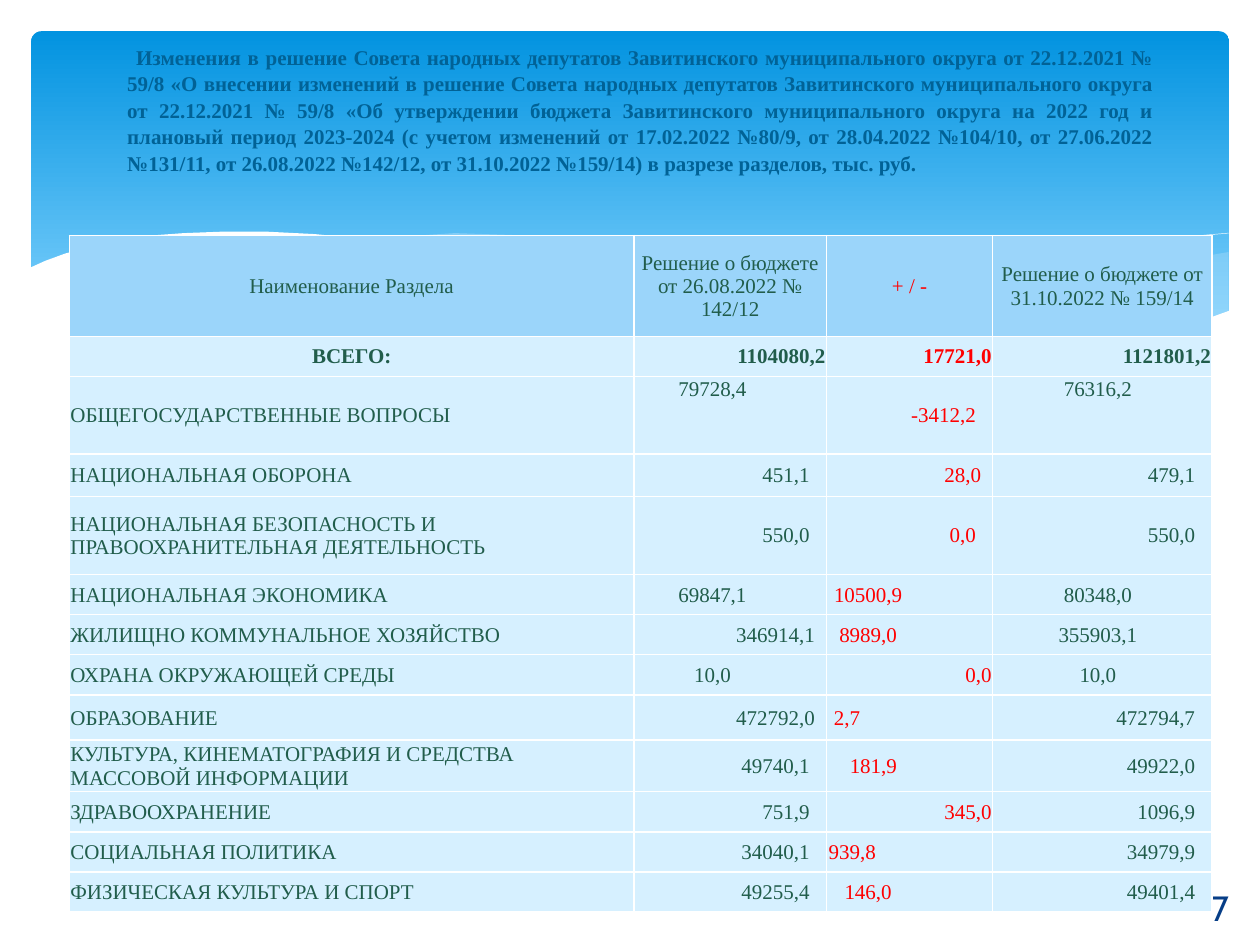
from lxml import etree
from pptx import Presentation
from pptx import util as u
from pptx.dml import color
from pptx.enum import shapes, text
from pptx.oxml import ns

SERIF = "Times New Roman"
WHITE, GREEN, RED = "FFFFFF", "215D4B", "FF0000"
SPACE = 0.106  # width of one 12 pt space, cm

HEADING = (
    "Изменения в решение Совета народных депутатов Завитинского муниципального округа "
    "от 22.12.2021 № 59/8 «О внесении изменений в решение Совета народных депутатов "
    "Завитинского муниципального округа от 22.12.2021 № 59/8 «Об утверждении бюджета "
    "Завитинского муниципального округа на 2022 год и плановый период 2023-2024 "
    "(с учетом изменений от 17.02.2022 №80/9, от 28.04.2022 №104/10, "
    "от 27.06.2022 №131/11, от 26.08.2022 №142/12, от 31.10.2022 №159/14) "
    "в разрезе разделов, тыс. руб."
)

COLUMN_WIDTHS = (11.38, 3.88, 3.35, 4.42)
HEADERS = ("Наименование Раздела", "Решение о бюджете от 26.08.2022 № 142/12",
           "+ / -", "Решение о бюджете от 31.10.2022 № 159/14")
# section, row height, the three sums, their right indents in spaces
SECTIONS = (
    ("ВСЕГО:", 0.81, ("1104080,2", "17721,0", "1121801,2"), (0, 0, 0)),
    ("ОБЩЕГОСУДАРСТВЕННЫЕ ВОПРОСЫ", 1.56, ("79728,4", "-3412,2", "76316,2"), (15, 3, 15)),
    ("НАЦИОНАЛЬНАЯ ОБОРОНА", 0.86, ("451,1", "28,0", "479,1"), (3, 2, 3)),
    ("НАЦИОНАЛЬНАЯ БЕЗОПАСНОСТЬ И ПРАВООХРАНИТЕЛЬНАЯ ДЕЯТЕЛЬНОСТЬ", 1.57,
     ("550,0", "0,0", "550,0"), (3, 3, 3)),
    ("НАЦИОНАЛЬНАЯ ЭКОНОМИКА", 0.81, ("69847,1", "10500,9", "80348,0"), (15, 17, 15)),
    ("ЖИЛИЩНО КОММУНАЛЬНОЕ ХОЗЯЙСТВО", 0.81, ("346914,1", "8989,0", "355903,1"), (2, 18, 14)),
    ("ОХРАНА ОКРУЖАЮЩЕЙ СРЕДЫ", 0.81, ("10,0", "0,0", "10,0"), (18, 0, 18)),
    ("ОБРАЗОВАНИЕ", 0.91, ("472792,0", "2,7", "472794,7"), (2, 25, 3)),
    ("КУЛЬТУРА, КИНЕМАТОГРАФИЯ И СРЕДСТВА МАССОВОЙ ИНФОРМАЦИИ", 1.04,
     ("49740,1", "181,9", "49922,0"), (3, 18, 3)),
    ("ЗДРАВООХРАНЕНИЕ", 0.81, ("751,9", "345,0", "1096,9"), (3, 0, 3)),
    ("СОЦИАЛЬНАЯ ПОЛИТИКА", 0.81, ("34040,1", "939,8", "34979,9"), (3, 22, 3)),
    ("ФИЗИЧЕСКАЯ КУЛЬТУРА И СПОРТ", 0.81, ("49255,4", "146,0", "49401,4"), (3, 19, 3)),
)

RIGHT_WAVE = (
    (24.77, 5.08), (23.75, 5.26), (22.63, 5.49), (21.13, 5.84), (19.13, 6.3), (16.79, 6.73),
    (17.91, 6.88), (19.23, 7.01), (20.68, 7.06), (21.92, 6.99), (22.99, 6.83), (23.93, 6.58),
    (24.77, 6.27))
MIDDLE_WAVE = (
    (22.68, 6.93), (21.26, 6.73), (19.69, 6.45), (17.93, 6.1), (15.98, 5.64), (14.45, 5.28),
    (13.06, 5.03), (11.81, 4.85), (10.67, 4.75), (9.17, 4.7), (7.95, 4.78), (7.26, 4.85),
    (8.69, 5.05), (10.26, 5.36), (12.47, 5.89), (14.38, 6.3), (16.51, 6.71), (18.34, 6.96),
    (19.94, 7.06), (21.29, 7.06))
FALLING_CURVE = (
    (7.85, 4.95), (8.51, 4.85), (9.5, 4.78), (10.57, 4.75), (11.91, 4.8), (13.54, 4.93),
    (15.44, 5.18), (17.65, 5.56), (20.19, 6.12), (22.07, 6.63), (23.04, 6.91))
RISING_CURVE = (
    (15.57, 6.53), (17.07, 6.12), (19, 5.66), (21.23, 5.18), (22.73, 4.93), (23.83, 4.78),
    (24.77, 4.7))
WHITE_WAVE = (
    (24.82, 6.25), (24.13, 6.5), (23.37, 6.73), (22.53, 6.88), (21.59, 6.99), (20.55, 7.04),
    (19.33, 6.99), (17.98, 6.86), (16.46, 6.65), (14.71, 6.35), (12.78, 5.92), (11.35, 5.59),
    (9.93, 5.26), (8.64, 5), (7.42, 4.83), (6.35, 4.72), (5.36, 4.67), (4.5, 4.67),
    (3.71, 4.7), (3.02, 4.75), (2.41, 4.85), (1.93, 4.95), (1.32, 5.11), (0.91, 5.26),
    (0.58, 5.41), (0.58, 8.36), (24.82, 8.36))


def rgb(hex_string):
    return color.RGBColor.from_string(hex_string)


def cm(*lengths):
    return [u.Cm(length) for length in lengths]


class BudgetSlide:
    """Holds the slide and its text style, and adds each kind of element."""

    def __init__(self, slide, font=SERIF, size=12):
        self.slide, self.font, self.size = slide, font, size

    def style(self, paragraph, ink, align, bold=False, font=None, size=None):
        paragraph.alignment = align
        for run in paragraph.runs:
            run.font.name = font or self.font
            run.font.size = u.Pt(size or self.size)
            run.font.bold = bold
            run.font.color.rgb = rgb(ink)

    def banner(self, box, top_color, bottom_color):
        banner = self.slide.shapes.add_shape(shapes.MSO_SHAPE.ROUNDED_RECTANGLE, *cm(*box))
        banner.shadow.inherit = False
        banner.adjustments[0] = 0.03
        banner.line.fill.background()
        banner.fill.gradient()
        banner.fill.gradient_angle = 270
        stops = banner.fill.gradient_stops
        for stop, position, hue in zip(stops, (0, 0.9), (top_color, bottom_color)):
            stop.position, stop.color.rgb = position, rgb(hue)

    def outline(self, points, closed):
        (x, y), *rest = [(round(x * 100), round(y * 100)) for x, y in points]
        builder = self.slide.shapes.build_freeform(x, y, scale=u.Cm(0.01))
        builder.add_line_segments(rest, close=closed)
        outline = builder.convert_to_shape()
        outline.shadow.inherit = False
        return outline

    def wave(self, points, fill, opacity=100):
        wave = self.outline(points, True)
        wave.line.fill.background()
        wave.fill.solid()
        wave.fill.fore_color.rgb = rgb(fill)
        if opacity < 100:
            tint = wave.fill._xPr.find(".//" + ns.qn("a:srgbClr"))
            etree.SubElement(tint, ns.qn("a:alpha"), val=str(opacity * 1000))

    def curve(self, points):
        curve = self.outline(points, False)
        curve.fill.background()
        curve.line.color.rgb = rgb(WHITE)
        curve.line.width = u.Pt(0.25)

    def title(self, wording, box, ink):
        title = self.slide.shapes.title
        self.slide.shapes._spTree.append(title._element)  # above the banner
        title.left, title.top, title.width, title.height = cm(*box)
        frame = title.text_frame
        frame.text = wording
        frame.word_wrap = True
        frame.auto_size = text.MSO_AUTO_SIZE.NONE
        frame.vertical_anchor = text.MSO_ANCHOR.TOP
        frame.margin_top = u.Cm(0.34)
        heading = frame.paragraphs[0]
        heading.line_spacing = 1.05
        heading._p.get_or_add_pPr().set("indent", str(u.Cm(0.18)))
        self.style(heading, ink, text.PP_ALIGN.JUSTIFY, bold=True)

    def page_number(self, number, box, ink):
        frame = self.slide.shapes.add_textbox(*cm(*box)).text_frame
        frame.text = number
        frame.word_wrap = True
        frame.vertical_anchor = text.MSO_ANCHOR.MIDDLE
        self.style(frame.paragraphs[0], ink, text.PP_ALIGN.CENTER, font="Cabin", size=20)

    def cell(self, cell, wording, fill, ink, align, bold=False, indent=0,
             anchor=text.MSO_ANCHOR.MIDDLE):
        cell.text = wording
        cell.vertical_anchor = anchor
        cell.margin_left = cell.margin_top = u.Cm(0.02)
        cell.margin_right = u.Cm(0.02 + indent * SPACE)
        cell.margin_bottom = 0
        cell.fill.solid()
        cell.fill.fore_color.rgb = rgb(fill)
        self.style(cell.text_frame.paragraphs[0], ink, align, bold)
        properties = cell._tc.get_or_add_tcPr()
        for place, side in enumerate(("lnL", "lnR", "lnT", "lnB")):
            border = etree.Element(ns.qn("a:" + side), w=str(u.Pt(1)))
            solid = etree.SubElement(border, ns.qn("a:solidFill"))
            etree.SubElement(solid, ns.qn("a:srgbClr"), val=WHITE)
            properties.insert(place, border)

    def budget_table(self, left, top, header_height, header_fill, body_fill):
        heights = [header_height] + [section[1] for section in SECTIONS]
        table = self.slide.shapes.add_table(
            len(heights), len(COLUMN_WIDTHS),
            *cm(left, top, sum(COLUMN_WIDTHS), sum(heights))).table
        for column, width in zip(table.columns, COLUMN_WIDTHS):
            column.width = u.Cm(width)
        for row, height in zip(table.rows, heights):
            row.height = u.Cm(height)
        inks = (GREEN, GREEN, RED, GREEN)
        align = text.PP_ALIGN
        for column, (header, ink) in enumerate(zip(HEADERS, inks)):
            self.cell(table.cell(0, column), header, header_fill, ink, align.CENTER)
        for row, (section, _, sums, indents) in enumerate(SECTIONS, 1):
            total = row == 1
            self.cell(table.cell(row, 0), section, body_fill, GREEN,
                      align.CENTER if total else align.LEFT, total)
            for column, (amount, indent) in enumerate(zip(sums, indents), 1):
                raised = row == 2 and column != 2
                self.cell(table.cell(row, column), amount, body_fill, inks[column],
                          align.RIGHT, total, indent,
                          text.MSO_ANCHOR.TOP if raised else text.MSO_ANCHOR.MIDDLE)


def main():
    deck = Presentation()
    deck.slide_width, deck.slide_height = cm(25.4, 19.05)
    budget = BudgetSlide(deck.slides.add_slide(deck.slide_layouts[5]))
    budget.banner((0.63, 0.63, 24.15, 6.86), "0293E0", "83D3FE")
    budget.wave(RIGHT_WAVE, "C6E7FC", 29)
    budget.wave(MIDDLE_WAVE, "C6E7FC", 40)
    budget.curve(FALLING_CURVE)
    budget.curve(RISING_CURVE)
    budget.wave(WHITE_WAVE, WHITE)
    budget.title(HEADING, (2.31, 0.53, 21.21, 3.07), "016296")
    budget.page_number("7", (23.8, 17.53, 1.6, 1.52), "073E87")
    budget.budget_table(1.4, 4.75, 2.03, "9BD5FA", "D6F0FF")
    deck.save("out.pptx")


if __name__ == "__main__":
    main()
